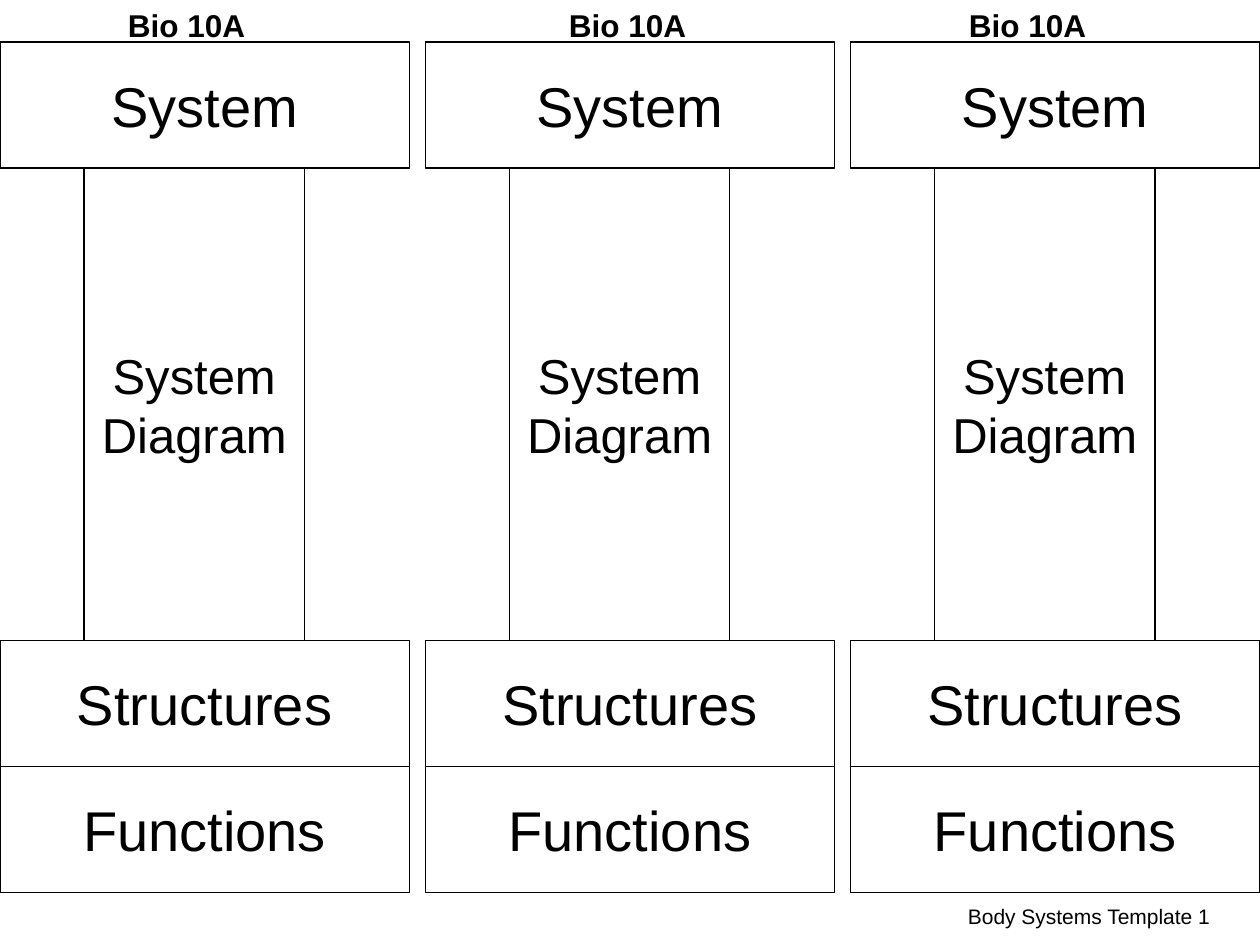
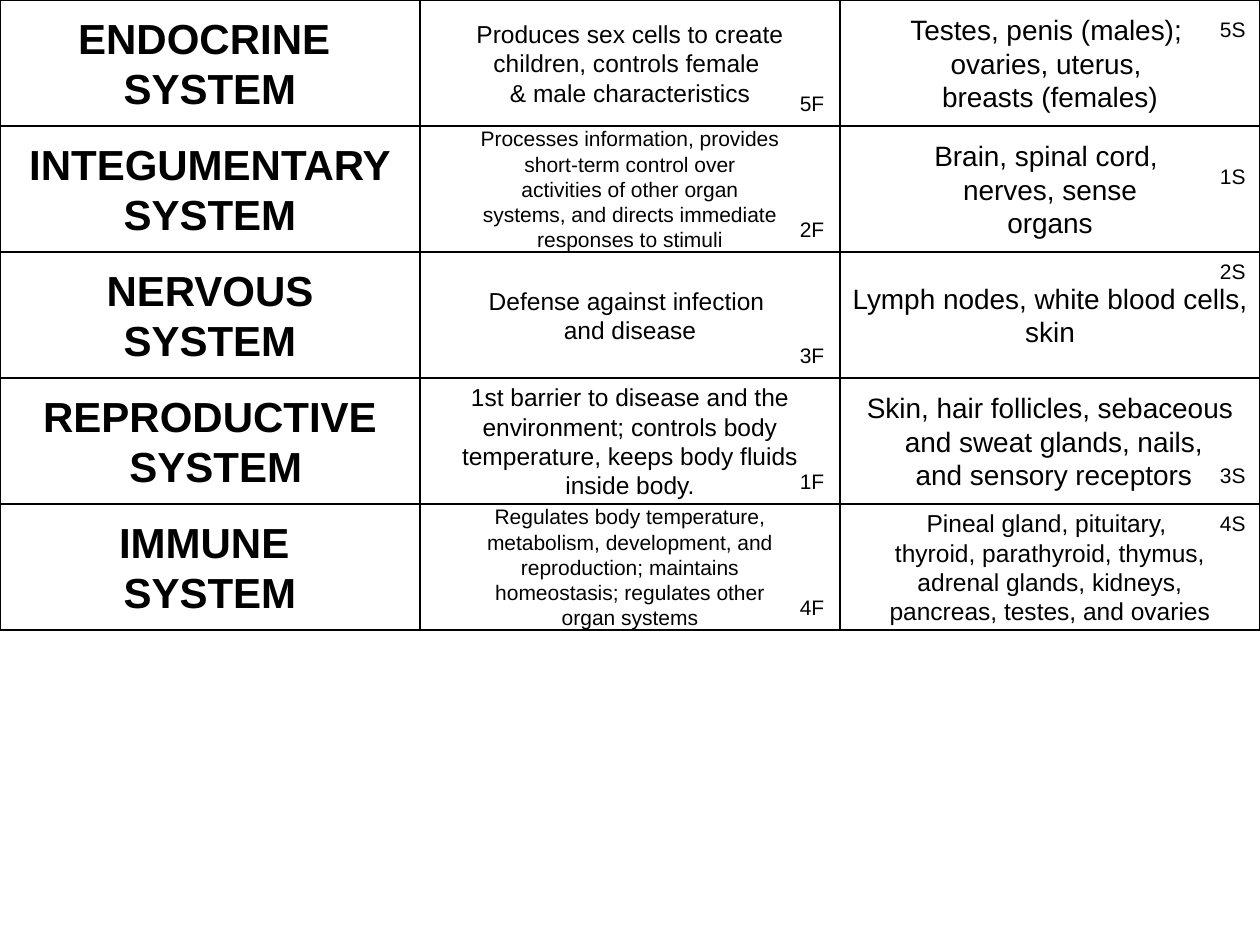
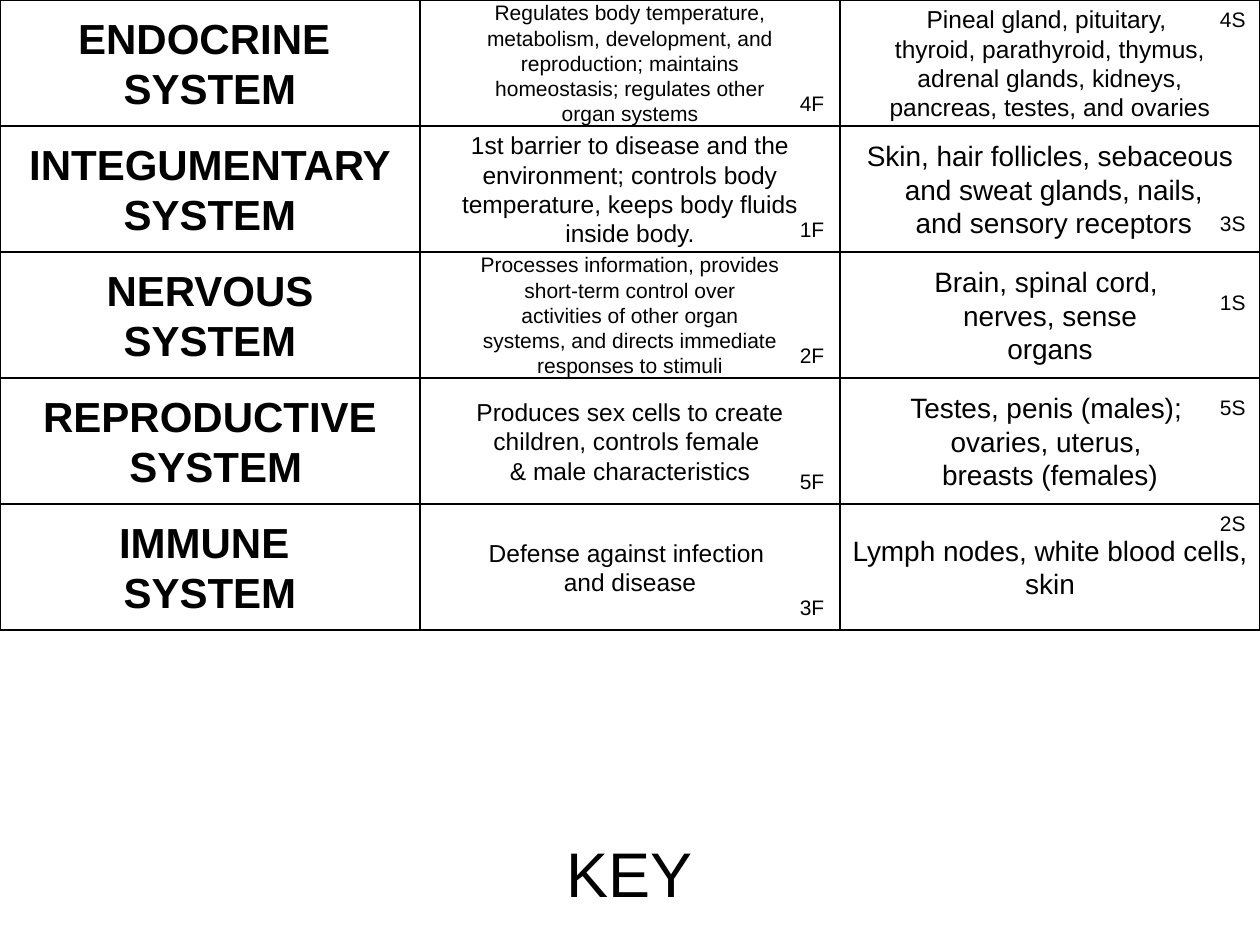
"""Build the body systems template, the sorting cards and their key."""
import pptx
import pptx.dml.color
import pptx.enum.shapes
import pptx.enum.text
import pptx.util

PX = 7620
WIDTH, HEIGHT = 1200, 900
CARD_W, CARD_H = 400, 120
TITLE_ONLY, BLANK = 5, 6
FONT = "Arial"
INK = "000000"

SYSTEMS = [
    "ENDOCRINE \nSYSTEM",
    "INTEGUMENTARY\nSYSTEM",
    "NERVOUS\nSYSTEM",
    "REPRODUCTIVE\n SYSTEM",
    "IMMUNE \nSYSTEM",
]

FUNCTIONS = {
    "1F": (14, "1st barrier to disease and the\nenvironment; controls body\n"
               "temperature, keeps body fluids\ninside body."),
    "2F": (12, "Processes information, provides\nshort-term control over\n"
               "activities of other organ\nsystems, and directs immediate\n"
               "responses to stimuli"),
    "3F": (14, "Defense against infection \nand disease"),
    "4F": (12, "Regulates body temperature,\nmetabolism, development, and\n"
               "reproduction; maintains\nhomeostasis; regulates other\n"
               "organ systems"),
    "5F": (14, "Produces sex cells to create\nchildren, controls female \n"
               "& male characteristics"),
}

STRUCTURES = {
    "1S": (16, "Brain, spinal cord, \nnerves, sense\norgans"),
    "2S": (16, "Lymph nodes, white blood cells, skin"),
    "3S": (16, "Skin, hair follicles, sebaceous\n and sweat glands, nails,\n"
               " and sensory receptors"),
    "4S": (14, "Pineal gland, pituitary, \nthyroid, parathyroid, thymus,\n"
               " adrenal glands, kidneys, \npancreas, testes, and ovaries"),
    "5S": (16, "Testes, penis (males); \novaries, uterus, \nbreasts (females)"),
}

FUNCTION_TAG_Y = 80
STRUCTURE_TAG_Y = {"1S": 30, "2S": 0, "3S": 75, "4S": 0, "5S": 10}


def color(value):
    return pptx.dml.color.RGBColor.from_string(value)


def write_text(tf, text, size=12, bold=False, align="LEFT", anchor="TOP", wrap=True):
    tf.word_wrap = wrap
    tf.vertical_anchor = getattr(pptx.enum.text.MSO_ANCHOR, anchor)
    for i, line in enumerate(text.split("\n")):
        p = tf.add_paragraph() if i else tf.paragraphs[0]
        p.alignment = getattr(pptx.enum.text.PP_ALIGN, align)
        r = p.add_run()
        r.text = line
        r.font.name = FONT
        r.font.size = pptx.util.Pt(size)
        r.font.bold = bold
        r.font.color.rgb = color(INK)


class Deck:
    def __init__(self):
        self.prs = pptx.Presentation()
        self.prs.slide_width = WIDTH * PX
        self.prs.slide_height = HEIGHT * PX
        self.s = None

    def slide(self, layout=BLANK):
        self.s = self.prs.slides.add_slide(self.prs.slide_layouts[layout])

    def title(self, text, x, y, w, h, size):
        sp = self.s.shapes.title
        sp.left, sp.top, sp.width, sp.height = (v * PX for v in (x, y, w, h))
        write_text(sp.text_frame, text, size=size, align="CENTER", anchor="MIDDLE")

    def box(self, text, x, y, w, h, size, bold=False, wrap=False):
        sp = self.s.shapes.add_shape(pptx.enum.shapes.MSO_SHAPE.RECTANGLE,
                                     *(v * PX for v in (x, y, w, h)))
        sp.shadow.inherit = False
        sp.fill.background()
        sp.line.color.rgb = color(INK)
        sp.line.width = pptx.util.Pt(0.75)
        write_text(sp.text_frame, text, size=size, bold=bold,
                   align="CENTER", anchor="MIDDLE", wrap=wrap)

    def label(self, text, x, y, w, h=36, size=12, bold=False):
        sp = self.s.shapes.add_textbox(*(v * PX for v in (x, y, w, h)))
        write_text(sp.text_frame, text, size=size, bold=bold)
        sp.text_frame.auto_size = pptx.enum.text.MSO_AUTO_SIZE.SHAPE_TO_FIT_TEXT

    def template_column(self, x, label_x):
        for text, y in (("System", 40), ("Structures", 610), ("Functions", 730)):
            self.box(text, x, y, 390, 120, 32)
        self.box("System\nDiagram", x + 80, 160, 210, 450, 28)
        self.label("Bio 10A", label_x, 0, 150, 48, 18, bold=True)

    def card(self, text, column, row, size, bold=False, wrap=False):
        self.box(text, column * CARD_W, row * CARD_H, CARD_W, CARD_H, size, bold, wrap)

    def tag(self, text, column, row, offset):
        self.label(text, (column + 1) * CARD_W - 50, row * CARD_H + offset, 50)

    def card_grid(self, functions, structures):
        for row, (system, f, st) in enumerate(zip(SYSTEMS, functions, structures)):
            self.card(system, 0, row, 24, bold=True)
            size, text = FUNCTIONS[f]
            self.card(text, 1, row, size)
            self.tag(f, 1, row, FUNCTION_TAG_Y)
            size, text = STRUCTURES[st]
            self.card(text, 2, row, size, wrap="\n" not in text)
            self.tag(st, 2, row, STRUCTURE_TAG_Y[st])


def main():
    deck = Deck()

    deck.slide()
    for i, label_x in enumerate((110, 530, 911)):
        deck.template_column(i * 405, label_x)
    deck.label("Body Systems Template 1", 910, 855, 270)

    deck.slide()
    deck.card_grid(("5F", "2F", "3F", "1F", "4F"), ("5S", "1S", "2S", "3S", "4S"))

    deck.slide(TITLE_ONLY)
    deck.card_grid(("4F", "1F", "2F", "5F", "3F"), ("4S", "3S", "1S", "5S", "2S"))
    deck.title("KEY", 410, 780, 380, 102, 36)

    deck.prs.save("out.pptx")


if __name__ == "__main__":
    main()
